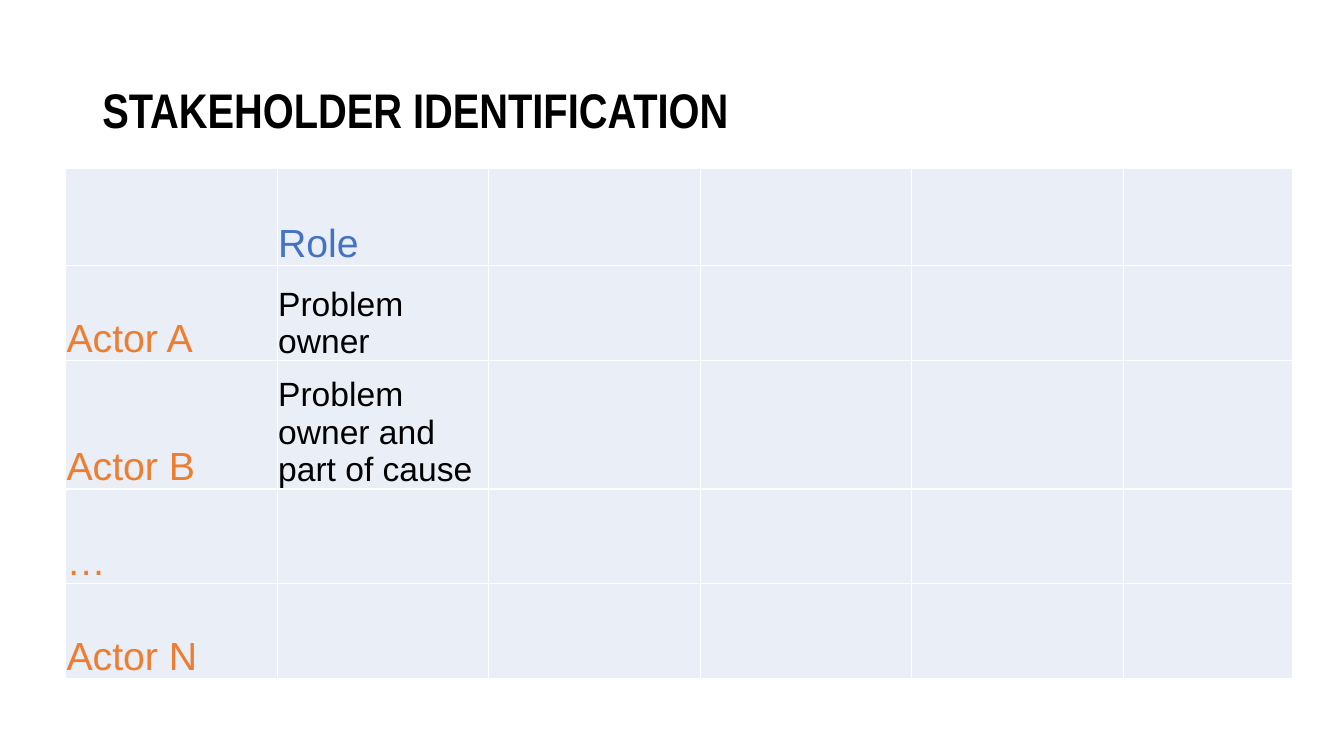
import pptx
import pptx.dml.color
import pptx.enum.text
import pptx.oxml
import pptx.oxml.ns
import pptx.util
from pptx.util import Cm

COLORS = {
    "title": "000000",
    "body": "000000",
    "heading": "4472C4",
    "actor": "ED7D31",
    "cell": "EAEFF7",
    "border": "FFFFFF",
}

COLUMN_WIDTHS = [5.33] * 5 + [4.27]
ROW_HEIGHTS = [2.45, 2.39, 3.23, 2.39, 2.39]
STAKEHOLDERS = [
    ["", "Role"],
    ["Actor A", "Problem owner"],
    ["Actor B", "Problem owner and part of cause"],
    ["…", ""],
    ["Actor N", ""],
]


def rgb(name):
    return pptx.dml.color.RGBColor.from_string(COLORS[name])


def write_text(frame, text, size, color, font="Arial", bold=False, line_spacing=1.0):
    para = frame.paragraphs[0]
    para.line_spacing = line_spacing
    span = para.add_run()
    span.text = text
    span.font.name = font
    span.font.size = pptx.util.Pt(size)
    span.font.bold = bold
    span.font.color.rgb = rgb(color)


class StakeholderPage:
    def __init__(self, deck):
        self.page = deck.slides.add_slide(deck.slide_layouts[6])

    def add_title(self, text, left, top, width, height):
        box = self.page.shapes.add_textbox(Cm(left), Cm(top), Cm(width), Cm(height))
        frame = box.text_frame
        frame.word_wrap = True
        frame.vertical_anchor = pptx.enum.text.MSO_ANCHOR.MIDDLE
        write_text(frame, text, 34.7, "title", font="Arial Narrow",
                   bold=True, line_spacing=0.9)

    def add_matrix(self, rows, left, top):
        table = self.page.shapes.add_table(
            len(ROW_HEIGHTS), len(COLUMN_WIDTHS), Cm(left), Cm(top),
            Cm(sum(COLUMN_WIDTHS)), Cm(sum(ROW_HEIGHTS))).table
        table.first_row = table.horz_banding = False
        for column, width in zip(table.columns, COLUMN_WIDTHS):
            column.width = Cm(width)
        for row, height in zip(table.rows, ROW_HEIGHTS):
            row.height = Cm(height)
        for cell in table.iter_cells():
            self.style_cell(cell)
        for row_index, texts in enumerate(rows):
            for column_index, text in enumerate(texts):
                if text:
                    self.fill_cell(table.cell(row_index, column_index), text,
                                   row_index, column_index)

    def style_cell(self, cell):
        properties = cell._tc.get_or_add_tcPr()
        for side in ("lnL", "lnR", "lnT", "lnB"):
            properties.append(pptx.oxml.parse_xml(
                f'<a:{side} {pptx.oxml.ns.nsdecls("a")} w="12700"><a:solidFill>'
                f'<a:srgbClr val="{COLORS["border"]}"/></a:solidFill></a:{side}>'))
        cell.fill.solid()
        cell.fill.fore_color.rgb = rgb("cell")

    def fill_cell(self, cell, text, row_index, column_index):
        cell.vertical_anchor = pptx.enum.text.MSO_ANCHOR.BOTTOM
        cell.margin_left = cell.margin_right = cell.margin_top = Cm(0.02)
        cell.margin_bottom = Cm(0)
        if row_index == 0:
            size, color = 28, "heading"
        elif column_index == 0:
            size, color = 28, "actor"
        else:
            size, color = 24, "body"
        write_text(cell.text_frame, text, size, color)


def main():
    deck = pptx.Presentation()
    deck.slide_width, deck.slide_height = Cm(33.87), Cm(19.05)
    page = StakeholderPage(deck)
    page.add_title("STAKEHOLDER IDENTIFICATION", 2.33, 1.01, 29.21, 3.68)
    page.add_matrix(STAKEHOLDERS, 1.66, 4.25)
    deck.save("out.pptx")


if __name__ == "__main__":
    main()
